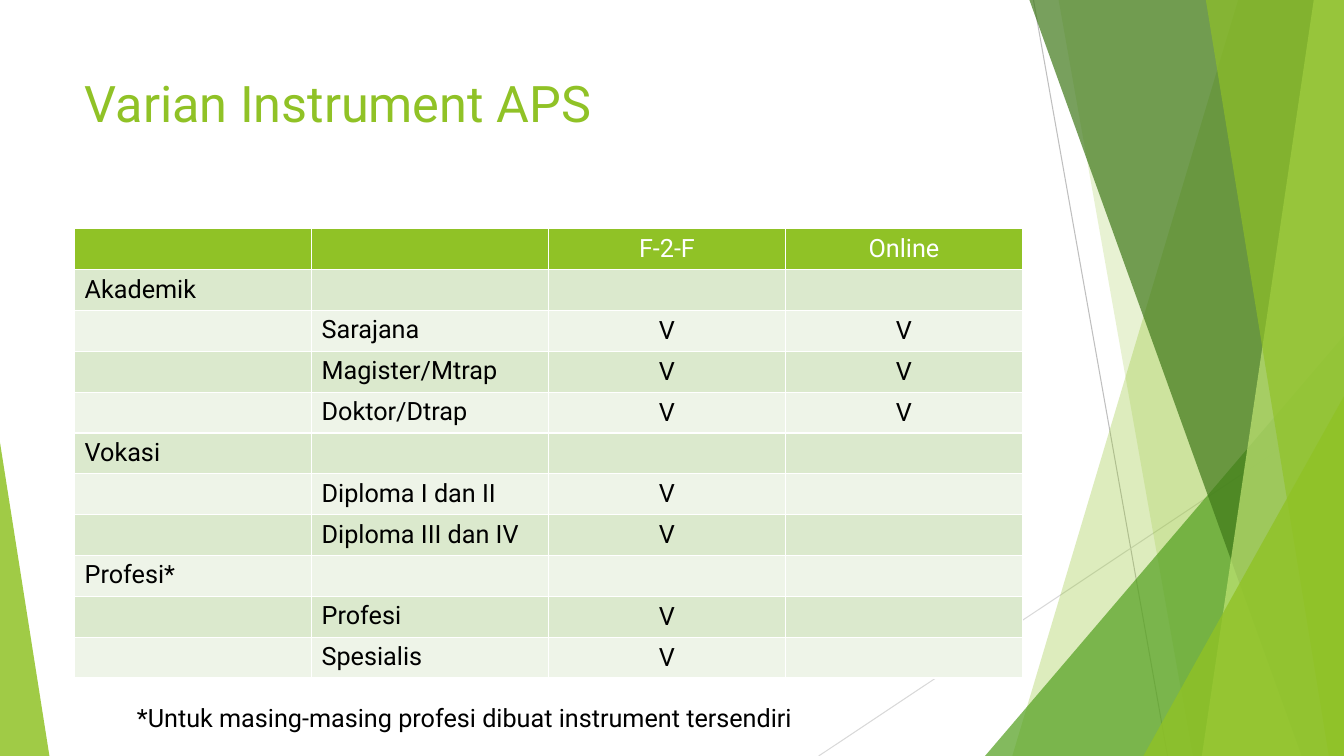
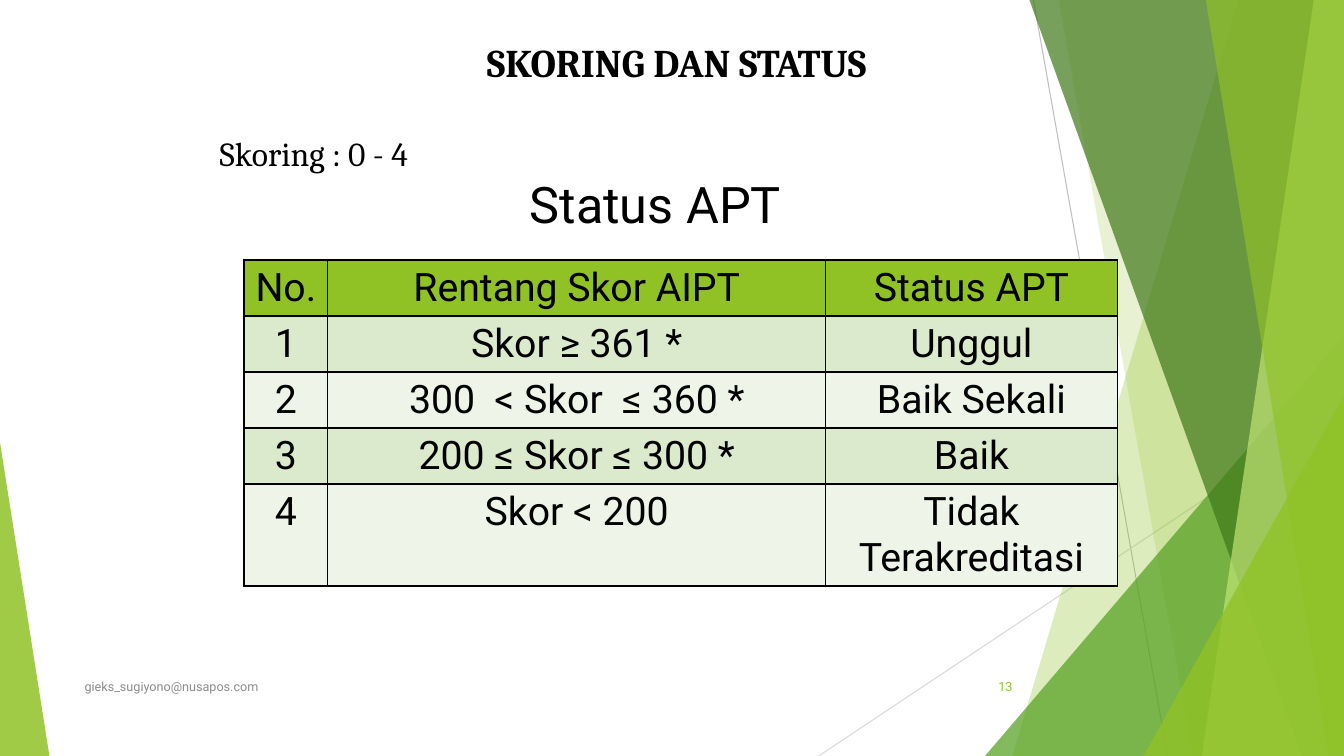
from dataclasses import dataclass

from lxml.etree import SubElement
from pptx import Presentation
from pptx.dml.color import RGBColor
from pptx.enum.shapes import MSO_CONNECTOR, MSO_SHAPE
from pptx.enum.text import MSO_ANCHOR, MSO_AUTO_SIZE, PP_ALIGN
from pptx.oxml.ns import qn
from pptx.util import Inches, Pt


@dataclass(frozen=True)
class Theme:
    lime: str = "90C226"
    pale_lime: str = "C0E474"
    green: str = "54A021"
    forest: str = "3F7819"
    band_dark: str = "DBE9CD"
    band_light: str = "EEF4E8"
    white: str = "FFFFFF"
    black: str = "000000"
    grey: str = "8C8C8C"
    line_dark: str = "BFBFBF"
    line_light: str = "D9D9D9"
    sans: str = "Roboto"
    serif: str = "Cambria"
    title: int = 36
    heading: int = 28
    score: int = 24
    body: int = 18
    footer: int = 9


THEME = Theme()
WIDTH, HEIGHT = 13.33, 7.5

# Start x, start y, end x, end y, colour
BACKDROP_LINES = [
    (10.25, 0, 11.58, HEIGHT, THEME.line_dark),
    (WIDTH, 4.03, 8.12, HEIGHT, THEME.line_light),
]
# Back to front. A band runs from top x to bottom x and fills to the right edge;
# a triangle is left, top, width and the position of its apex.
BACKDROP_SHAPES = [
    ("band", (12.28, 10.04), THEME.lime, 30),
    ("band", (10.5, 11.83), THEME.lime, 20),
    ("triangle", (9.77, 3.33, 3.56, 1), THEME.green, 72),
    ("band", (10.21, 12.91), THEME.forest, 70),
    ("band", (13.03, 11.92), THEME.pale_lime, 70),
    ("band", (11.96, 13.18), THEME.lime, 65),
    ("triangle", (11.34, 3.93, 1.99, 1), THEME.lime, 80),
    ("triangle", (0, 4.39, 0.49, 0), THEME.lime, 85),
]

VARIANT_HEADER = ["", "", "F-2-F", "Online"]
VARIANT_GROUPS = [
    ("Akademik", [("Sarajana", "V", "V"), ("Magister/Mtrap", "V", "V"),
                  ("Doktor/Dtrap", "V", "V")]),
    ("Vokasi", [("Diploma I dan II", "V", ""), ("Diploma III dan IV", "V", "")]),
    ("Profesi*", [("Profesi", "V", ""), ("Spesialis", "V", "")]),
]
STATUS_ROWS = [
    ("No.", "Rentang Skor AIPT", "Status APT"),
    ("1", "Skor ≥ 361 *", "Unggul"),
    ("2", "300  < Skor  ≤ 360 *", "Baik Sekali"),
    ("3", "200 ≤ Skor ≤ 300 *", "Baik"),
    ("4", "Skor < 200", "Tidak Terakreditasi"),
]


def rgb(colour):
    return RGBColor.from_string(colour)


def set_font(para, size, colour, face=THEME.sans, bold=False):
    font = para.font
    font.size, font.name, font.bold = Pt(size), face, bold
    font.color.rgb = rgb(colour)


def draw_band(page, top_x, bottom_x):
    builder = page.shapes.build_freeform(Inches(top_x), 0, scale=1.0)
    corners = [(WIDTH, 0), (WIDTH, HEIGHT), (bottom_x, HEIGHT)]
    builder.add_line_segments([(Inches(x), Inches(y)) for x, y in corners], close=True)
    return builder.convert_to_shape()


def draw_triangle(page, left, top, width, apex):
    shape = page.shapes.add_shape(MSO_SHAPE.ISOSCELES_TRIANGLE, Inches(left), Inches(top),
                                  Inches(width), Inches(HEIGHT - top))
    shape.adjustments[0] = apex
    return shape


def draw_backdrop(page):
    """Draw the facets and lines, and return them from back to front."""
    drawn = []
    for x1, y1, x2, y2, colour in BACKDROP_LINES:
        line = page.shapes.add_connector(MSO_CONNECTOR.STRAIGHT, Inches(x1), Inches(y1),
                                         Inches(x2), Inches(y2))
        line.line.color.rgb = rgb(colour)
        line.line.width = Pt(0.75)
        SubElement(line.element.spPr, qn("a:effectLst"))
        drawn.append(line)
    draw = {"band": draw_band, "triangle": draw_triangle}
    for kind, geometry, colour, opacity in BACKDROP_SHAPES:
        shape = draw[kind](page, *geometry)
        shape.shadow.inherit = False
        shape.line.fill.background()
        shape.fill.solid()
        shape.fill.fore_color.rgb = rgb(colour)
        tint = shape.element.spPr.find(qn("a:solidFill"))[0]
        SubElement(tint, qn("a:alpha"), val=str(opacity * 1000))
        drawn.append(shape)
    return drawn


def move_to_layout(shapes, layout):
    """Make the shapes part of the layout, behind its title."""
    for holder in list(layout.placeholders)[1:]:
        holder.element.getparent().remove(holder.element)
    tree = layout.shapes.element
    for position, shape in enumerate(shapes, start=2):
        tree.insert(position, shape.element)


def set_title(page, text, box, colour, align=PP_ALIGN.LEFT):
    title = page.shapes.title
    title.left, title.top, title.width, title.height = map(Inches, box)
    frame = title.text_frame
    frame.text = text
    frame.auto_size = MSO_AUTO_SIZE.NONE
    frame.vertical_anchor = MSO_ANCHOR.TOP
    para = frame.paragraphs[0]
    para.alignment = align
    set_font(para, THEME.title, colour)


def add_text(page, text, box, size, colour=THEME.black, face=THEME.sans, bold=False,
             align=PP_ALIGN.LEFT, anchor=MSO_ANCHOR.TOP):
    frame = page.shapes.add_textbox(*map(Inches, box)).text_frame
    frame.word_wrap = True
    frame.vertical_anchor = anchor
    para = frame.paragraphs[0]
    para.text, para.alignment = text, align
    set_font(para, size, colour, face, bold)


def set_borders(cell, colour):
    properties = cell._tc.get_or_add_tcPr()
    for side in ("lnL", "lnR", "lnT", "lnB"):
        line = SubElement(properties, qn(f"a:{side}"), w=str(Pt(1)))
        fill = SubElement(line, qn("a:solidFill"))
        SubElement(fill, qn("a:srgbClr"), val=colour)


def add_grid(page, rows, left, top, widths, heights, size, header_colour, border,
             first_centred=0, anchor=MSO_ANCHOR.TOP):
    """Add a banded table whose columns are centred from first_centred on."""
    frame = page.shapes.add_table(len(rows), len(widths), Inches(left), Inches(top),
                                  Inches(sum(widths)), Inches(sum(heights)))
    table = frame.table
    table.first_row = table.horz_banding = False
    for column, width in zip(table.columns, widths):
        column.width = Inches(width)
    for r, (row, height) in enumerate(zip(rows, heights)):
        table.rows[r].height = Inches(height)
        band = THEME.band_dark if r % 2 else THEME.band_light
        for c, text in enumerate(row):
            cell = table.cell(r, c)
            set_borders(cell, border)
            cell.fill.solid()
            cell.fill.fore_color.rgb = rgb(band if r else THEME.lime)
            para = cell.text_frame.paragraphs[0]
            para.text = text
            set_font(para, size, THEME.black if r else header_colour)
            if c >= first_centred:
                para.alignment = PP_ALIGN.CENTER
                cell.vertical_anchor = anchor


def fill_variants(page):
    set_title(page, "Varian Instrument APS", (0.74, 0.67, 9.4, 1.44), THEME.lime)
    rows = [VARIANT_HEADER]
    for group, programmes in VARIANT_GROUPS:
        rows.append([group, "", "", ""])
        rows += [["", *programme] for programme in programmes]
    add_grid(page, rows, 0.74, 2.27, [2.35] * 4, [4.46 / len(rows)] * len(rows),
             THEME.body, THEME.white, THEME.white, first_centred=2, anchor=MSO_ANCHOR.MIDDLE)
    add_text(page, "*Untuk masing-masing profesi dibuat instrument tersendiri",
             (1.26, 6.92, 7.48, 0.4), THEME.body)


def fill_status(page):
    set_title(page, "Status APT", (2.25, 1.67, 8.5, 0.8), THEME.black, PP_ALIGN.CENTER)
    add_grid(page, STATUS_ROWS, 2.42, 2.58, [0.83, 4.94, 2.89], [0.55] * 4 + [1.01],
             THEME.heading, THEME.black, THEME.black)
    add_text(page, "gieks_sugiyono@nusapos.com", (0.74, 6.61, 6.89, 0.4), THEME.footer,
             THEME.grey, anchor=MSO_ANCHOR.MIDDLE)
    add_text(page, "13", (9.39, 6.61, 0.75, 0.4), THEME.footer, THEME.lime,
             align=PP_ALIGN.RIGHT, anchor=MSO_ANCHOR.MIDDLE)
    add_text(page, "Skoring : 0 - 4", (2.08, 1.27, 9.33, 0.5), THEME.score, face=THEME.serif)
    add_text(page, "SKORING DAN STATUS", (1.92, 0.33, 9.58, 0.57), THEME.heading,
             face=THEME.serif, bold=True, align=PP_ALIGN.CENTER)


def main():
    deck = Presentation()
    deck.slide_width, deck.slide_height = Inches(WIDTH), Inches(HEIGHT)
    layout = deck.slide_layouts.get_by_name("Title Only")
    variants, status = (deck.slides.add_slide(layout) for _ in range(2))
    move_to_layout(draw_backdrop(variants), layout)
    fill_variants(variants)
    fill_status(status)
    deck.save("out.pptx")


if __name__ == "__main__":
    main()
